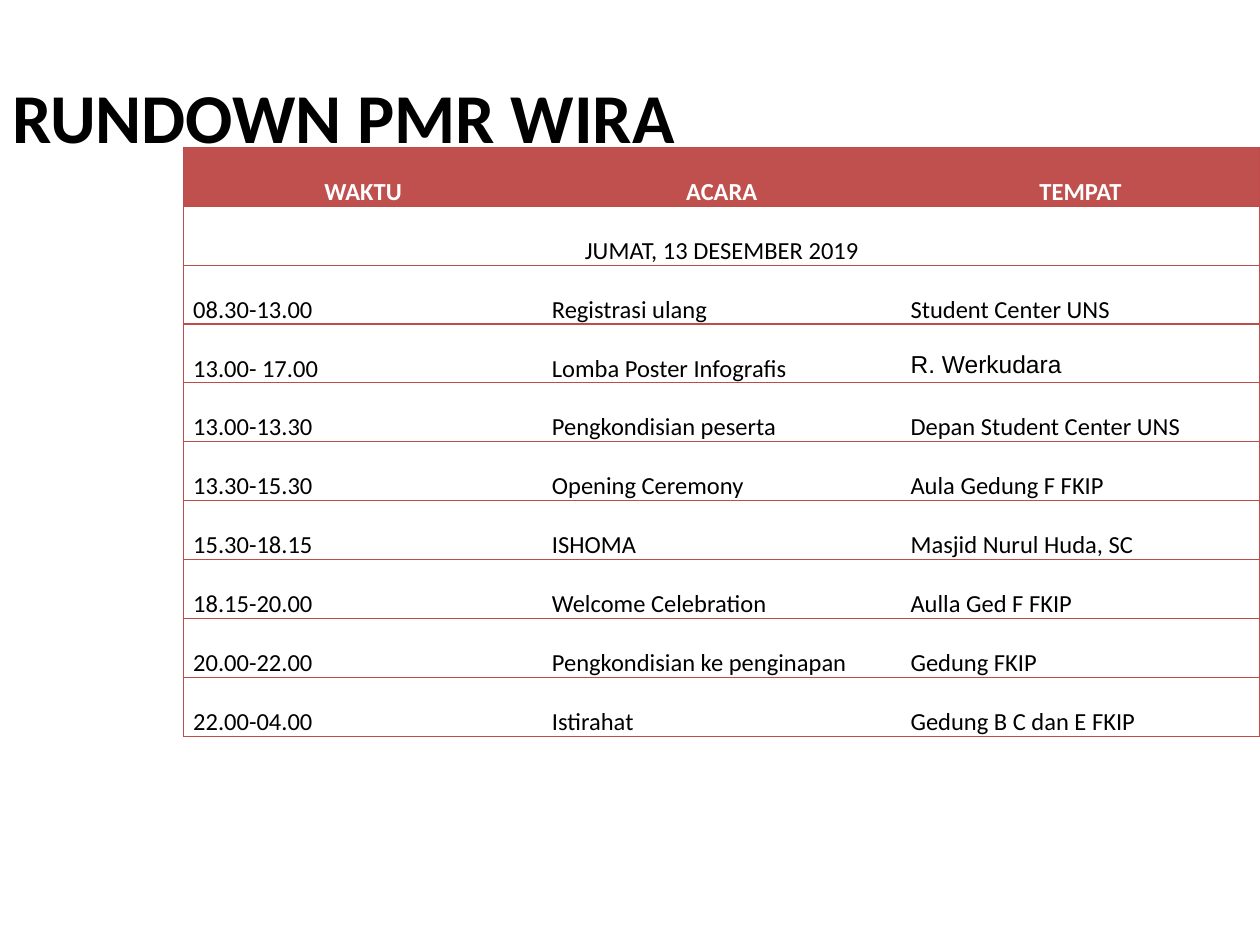
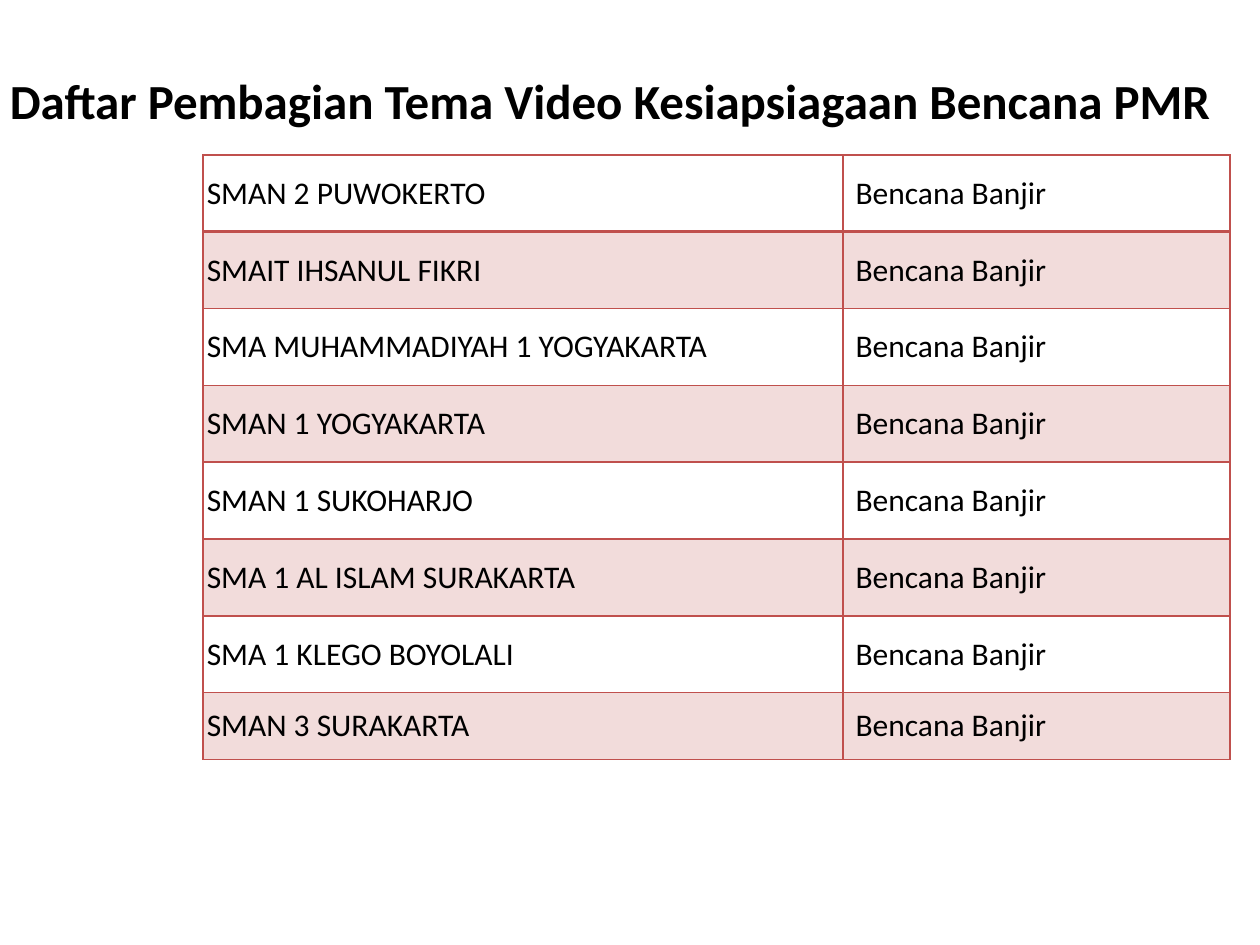
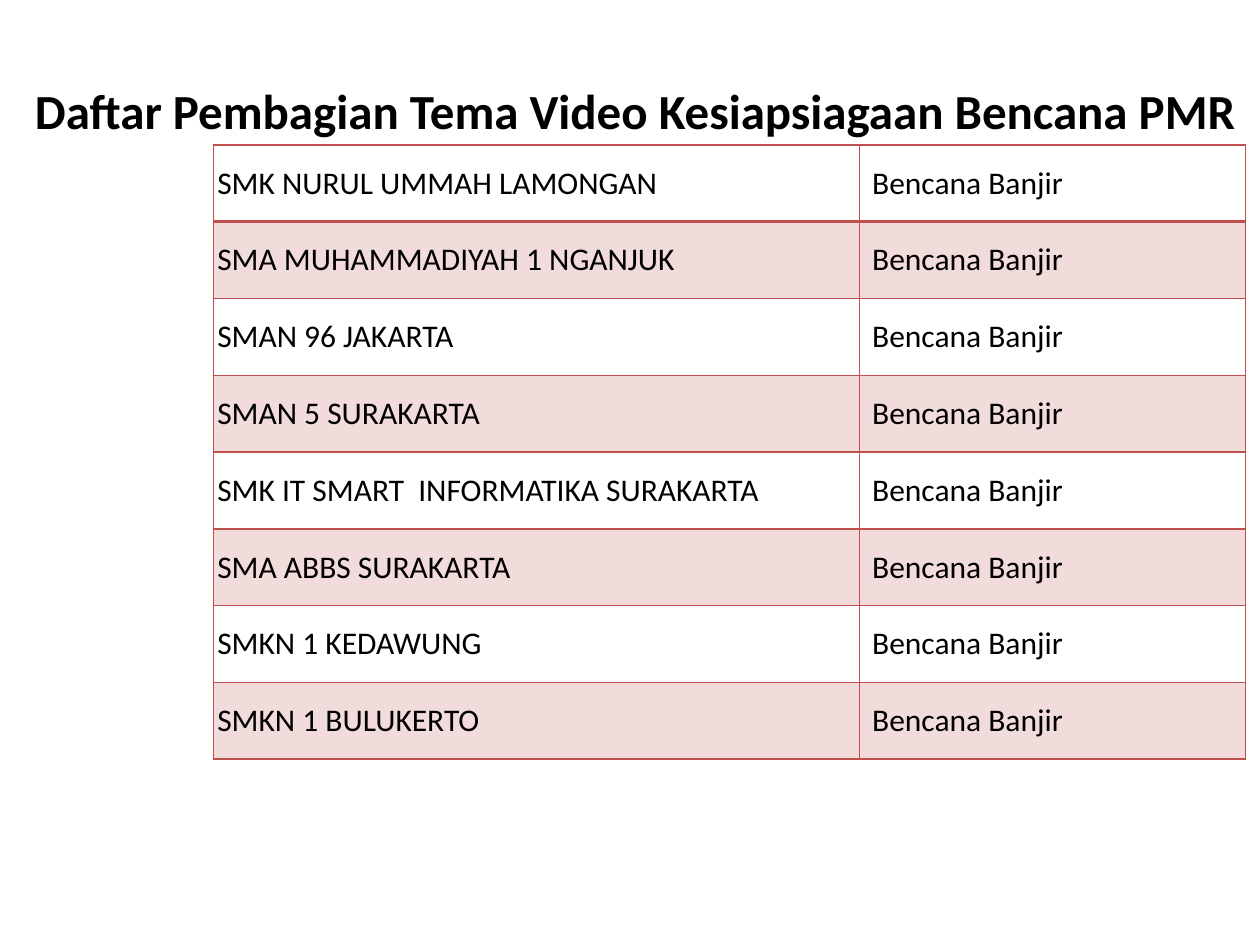
from lxml import etree
from pptx import Presentation
from pptx.dml.color import RGBColor
from pptx.enum.text import MSO_ANCHOR, MSO_AUTO_SIZE, PP_ALIGN
from pptx.oxml.ns import qn
from pptx.util import Pt

LEFT, CENTER, JUSTIFY = PP_ALIGN.LEFT, PP_ALIGN.CENTER, PP_ALIGN.JUSTIFY
TOP, MIDDLE = MSO_ANCHOR.TOP, MSO_ANCHOR.MIDDLE
GROW, FIXED = MSO_AUTO_SIZE.SHAPE_TO_FIT_TEXT, MSO_AUTO_SIZE.NONE

# Content
RUNDOWN_TITLE = "RUNDOWN PMR WIRA"
RUNDOWN_HEAD = ("WAKTU", "ACARA", "TEMPAT")
RUNDOWN_DAY = "JUMAT, 13 DESEMBER 2019"
RUNDOWN = [
    ("08.30-13.00", "Registrasi ulang", "Student Center UNS"),
    ("13.00- 17.00", "Lomba Poster Infografis", "R. Werkudara"),
    ("13.00-13.30", "Pengkondisian peserta", "Depan Student Center UNS"),
    ("13.30-15.30", "Opening Ceremony", "Aula Gedung F FKIP"),
    ("15.30-18.15", "ISHOMA", "Masjid Nurul Huda, SC"),
    ("18.15-20.00", "Welcome Celebration", "Aulla Ged F FKIP"),
    ("20.00-22.00", "Pengkondisian ke penginapan", "Gedung FKIP"),
    ("22.00-04.00", "Istirahat", "Gedung B C dan E FKIP"),
]
ARIAL_PLACE = "R. Werkudara"

THEME_TITLE = "Daftar Pembagian Tema Video Kesiapsiagaan Bencana PMR"
THEME = "Bencana Banjir"
THEME_SLIDES = [
    {"title_at": (-8.64, 37.4), "table_at": (116, 88.6), "cols": (365.7, 221.3),
     "last_row": 38.2,
     "schools": ["SMAN 2 PUWOKERTO", "SMAIT IHSANUL FIKRI",
                 "SMA MUHAMMADIYAH 1 YOGYAKARTA", "SMAN 1 YOGYAKARTA",
                 "SMAN 1 SUKOHARJO", "SMA 1 AL ISLAM SURAKARTA",
                 "SMA 1 KLEGO BOYOLALI", "SMAN 3 SURAKARTA"]},
    {"title_at": (5.76, 43.2), "table_at": (122, 82.8), "cols": (369.2, 220.4),
     "last_row": 43.9,
     "schools": ["SMK NURUL UMMAH LAMONGAN", "SMA MUHAMMADIYAH 1 NGANJUK",
                 "SMAN 96 JAKARTA", "SMAN 5 SURAKARTA",
                 "SMK IT SMART  INFORMATIKA SURAKARTA", "SMA ABBS SURAKARTA",
                 "SMKN 1 KEDAWUNG", "SMKN 1 BULUKERTO"]},
]

# Shared style
COLORS = {"text": "000000", "white": "FFFFFF", "red": "C0504D",
          "rule": "BF4C48", "band": "F2DCDB"}
FONT = "Calibri"
RUNDOWN_INSETS = (5.4, 0, 5.4, 0)
SCHOOL_INSETS = (2.16, 1.44, 2.16, 1.44)
THEME_INSETS = (7.2, 3.6, 7.2, 3.6)
RUNDOWN_ROW, THEME_ROW = 33.66, 43.9


def add_text(p, text, size, color="text", bold=False, font=FONT):
    r = p.add_run()
    r.text = text
    r.font.size = Pt(size)
    r.font.name = font
    r.font.bold = bold
    r.font.color.rgb = RGBColor.from_string(COLORS[color])


def add_title(slide, text, box, size, align, anchor, fit):
    tf = slide.shapes.add_textbox(*map(Pt, box)).text_frame
    tf.word_wrap = True
    tf.auto_size = fit
    tf.vertical_anchor = anchor
    tf.paragraphs[0].alignment = align
    add_text(tf.paragraphs[0], text, size, bold=True)


def add_grid(slide, at, cols, rows):
    size = (sum(cols), sum(rows))
    table = slide.shapes.add_table(len(rows), len(cols), *map(Pt, at + size)).table
    table.first_row = table.horz_banding = False
    for column, width in zip(table.columns, cols):
        column.width = Pt(width)
    for row, height in zip(table.rows, rows):
        row.height = Pt(height)
    return table


def set_borders(cell, color, widths):
    """Widths run left, right, top, bottom; 0 hides the line."""
    tc_pr = cell._tc.get_or_add_tcPr()
    for side, width in zip("LRTB", widths):
        ln = etree.SubElement(tc_pr, qn(f"a:ln{side}"), w=str(Pt(width)))
        if width:
            fill = etree.SubElement(ln, qn("a:solidFill"))
            etree.SubElement(fill, qn("a:srgbClr"), val=COLORS[color])
        else:
            etree.SubElement(ln, qn("a:noFill"))


def style_cell(cell, insets, anchor, fill):
    (cell.margin_left, cell.margin_top,
     cell.margin_right, cell.margin_bottom) = map(Pt, insets)
    cell.vertical_anchor = anchor
    if fill:
        cell.fill.solid()
        cell.fill.fore_color.rgb = RGBColor.from_string(COLORS[fill])
    else:
        cell.fill.background()


def build_rundown(slide):
    add_title(slide, RUNDOWN_TITLE, (0, 38.2, 500.4, 55.4), 40, LEFT, TOP, GROW)
    lines = [RUNDOWN_HEAD, (RUNDOWN_DAY, "", "")] + RUNDOWN
    table = add_grid(slide, (105, 84.2), (205,) * 3, (RUNDOWN_ROW,) * len(lines))
    table.cell(1, 0).merge(table.cell(1, 2))
    for i, line in enumerate(lines):
        for j, text in enumerate(line):
            cell = table.cell(i, j)
            edges = (0.75 * (j == 0), 0.75 * (j == 2), 0.75, 0.75)
            if cell.is_merge_origin:
                edges = (0.75,) * 4
            set_borders(cell, "rule", edges)
            style_cell(cell, RUNDOWN_INSETS, TOP, "red" if i == 0 else None)
            if not text:
                continue
            p = cell.text_frame.paragraphs[0]
            p.alignment = CENTER if i < 2 else JUSTIFY
            p.line_spacing = 2.0
            add_text(p, text, 14, "white" if i == 0 else "text", i == 0,
                     "Arial" if text == ARIAL_PLACE else FONT)


def build_themes(slide, data):
    schools = data["schools"]
    rows = (THEME_ROW,) * (len(schools) - 1) + (data["last_row"],)
    table = add_grid(slide, data["table_at"], data["cols"], rows)
    for i, school in enumerate(schools):
        edges = (1, 1, 2 if i == 1 else 1, 2 if i == 0 else 1)
        for j, (text, insets) in enumerate([(school, SCHOOL_INSETS),
                                            (THEME, THEME_INSETS)]):
            cell = table.cell(i, j)
            set_borders(cell, "red", edges)
            style_cell(cell, insets, MIDDLE, "band" if i % 2 else None)
            add_text(cell.text_frame.paragraphs[0], text, 18)
    add_title(slide, THEME_TITLE, data["title_at"] + (714.2, 39.6), 28,
              CENTER, MIDDLE, FIXED)


def main():
    prs = Presentation()
    prs.slide_width, prs.slide_height = Pt(720), Pt(540)
    blank = prs.slide_layouts[6]
    build_rundown(prs.slides.add_slide(blank))
    for data in THEME_SLIDES:
        build_themes(prs.slides.add_slide(blank), data)
    prs.save("out.pptx")


if __name__ == "__main__":
    main()
